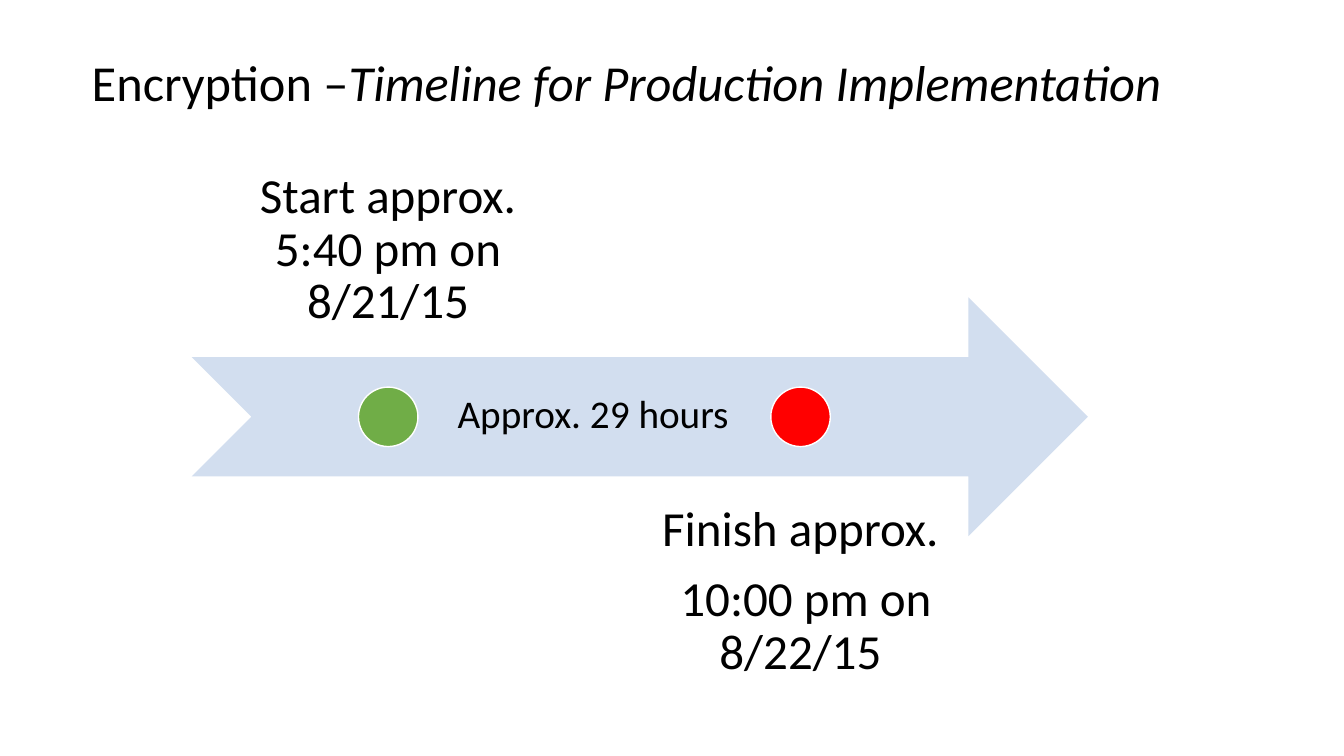
from dataclasses import dataclass

from pptx import Presentation
from pptx.dml.color import RGBColor
from pptx.enum.shapes import MSO_SHAPE
from pptx.enum.text import MSO_ANCHOR, MSO_AUTO_SIZE, PP_ALIGN
from pptx.util import Inches, Pt

AXIS_Y = 4.135
ARROW_LEFT, ARROW_WIDTH, ARROW_HEIGHT = 1.9, 8.89, 2.37
DOT_SIZE = 0.59
LABEL_WIDTH, LABEL_HEIGHT, LABEL_INSET = 3.9, 2.37, 0.27


@dataclass
class Milestone:
    """A dot on the timeline arrow with its label."""
    center_x: float
    color: str
    label_top: float
    anchor: MSO_ANCHOR
    lines: list[str]


MILESTONES = [
    Milestone(3.85, "70AD47", 1.17, MSO_ANCHOR.BOTTOM,
              ["Start approx. 5:40 pm on 8/21/15"]),
    Milestone(7.94, "FF0000", 4.73, MSO_ANCHOR.TOP,
              ["Finish approx.", " 10:00 pm on 8/22/15"]),
]


def rgb(color: str) -> RGBColor:
    """Turn a hex string into a colour."""
    return RGBColor.from_string(color)


def add_run(p, text: str, *, size: float, italic: bool = False,
            color: str = "000000") -> None:
    """Append a formatted run to a paragraph."""
    r = p.add_run()
    r.text = text
    r.font.name = "Calibri"
    r.font.size = Pt(size)
    r.font.italic = italic
    r.font.color.rgb = rgb(color)


def format_paragraph(p, *, align: PP_ALIGN = PP_ALIGN.LEFT, after: float = 0) -> None:
    """Set alignment and spacing of a paragraph."""
    p.alignment = align
    p.line_spacing = 0.9
    p.space_before = Pt(0)
    p.space_after = Pt(after)


def add_text(s, box: tuple, lines: list[str], *, size: float,
             align: PP_ALIGN = PP_ALIGN.LEFT, anchor: MSO_ANCHOR = MSO_ANCHOR.TOP,
             inset: float | None = None, after: float = 0) -> None:
    """Add a wrapped text box with one paragraph per line."""
    tf = s.shapes.add_textbox(*map(Inches, box)).text_frame
    tf.word_wrap = True
    tf.vertical_anchor = anchor
    if inset is not None:
        tf.margin_left = tf.margin_right = Inches(inset)
        tf.margin_top = tf.margin_bottom = Inches(inset)
    for i, line in enumerate(lines):
        p = tf.add_paragraph() if i else tf.paragraphs[0]
        format_paragraph(p, align=align, after=after)
        add_run(p, line, size=size)


def add_shape(s, kind: MSO_SHAPE, box: tuple, fill: str, line: str | None = None) -> None:
    """Add a flat filled shape with an optional thin outline."""
    sp = s.shapes.add_shape(kind, *map(Inches, box))
    sp.shadow.inherit = False
    sp.fill.solid()
    sp.fill.fore_color.rgb = rgb(fill)
    if line:
        sp.line.color.rgb = rgb(line)
        sp.line.width = Pt(1)
    else:
        sp.line.fill.background()


def add_title(s) -> None:
    """Fill and place the title placeholder."""
    sp = s.shapes.title
    sp.left, sp.top, sp.width, sp.height = map(Inches, (0.81, 0.52, 11.5, 0.65))
    tf = sp.text_frame
    tf.word_wrap = True
    tf.auto_size = MSO_AUTO_SIZE.NONE
    tf.vertical_anchor = MSO_ANCHOR.MIDDLE
    p = tf.paragraphs[0]
    format_paragraph(p)
    add_run(p, "Encryption –", size=36)
    add_run(p, "Timeline for Production Implementation", size=36, italic=True)


def add_milestone(s, m: Milestone) -> None:
    """Draw a milestone's label and dot."""
    label = (m.center_x - LABEL_WIDTH / 2, m.label_top, LABEL_WIDTH, LABEL_HEIGHT)
    add_text(s, label, m.lines, size=35, align=PP_ALIGN.CENTER, anchor=m.anchor,
             inset=LABEL_INSET, after=12.25)
    dot = (m.center_x - DOT_SIZE / 2, AXIS_Y - DOT_SIZE / 2, DOT_SIZE, DOT_SIZE)
    add_shape(s, MSO_SHAPE.OVAL, dot, m.color, "FFFFFF")


def main() -> None:
    """Build and save the timeline slide."""
    prs = Presentation()
    prs.slide_width, prs.slide_height = Inches(13.33), Inches(7.5)
    s = prs.slides.add_slide(prs.slide_layouts[5])
    add_title(s)
    arrow = (ARROW_LEFT, AXIS_Y - ARROW_HEIGHT / 2, ARROW_WIDTH, ARROW_HEIGHT)
    add_shape(s, MSO_SHAPE.NOTCHED_RIGHT_ARROW, arrow, "D2DEEF")
    for m in MILESTONES:
        add_milestone(s, m)
    add_text(s, (4.44, 3.87, 2.95, 0.53), ["Approx. 29 hours"], size=28)
    prs.save("out.pptx")


if __name__ == "__main__":
    main()
